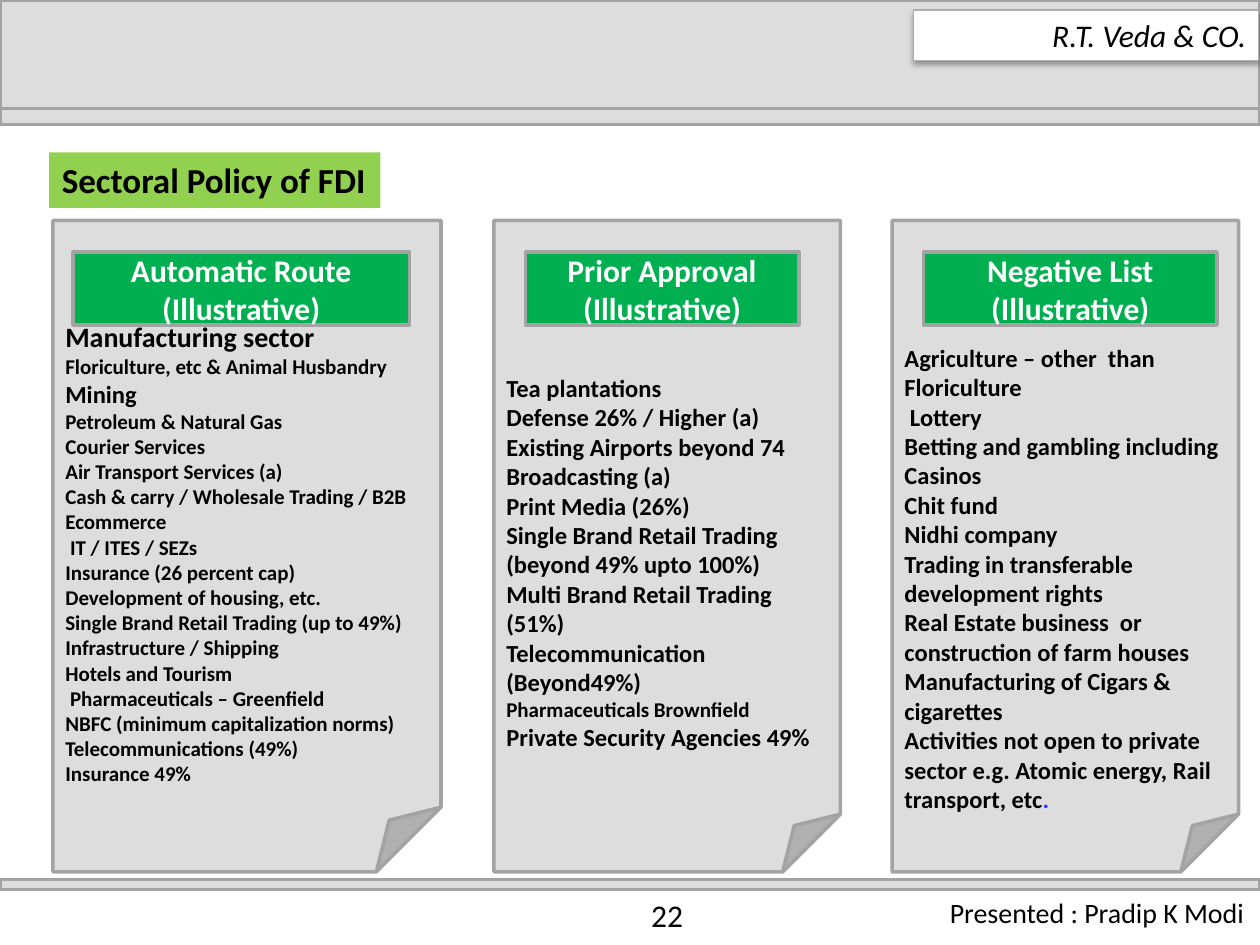
from lxml.etree import SubElement
from pptx import Presentation
from pptx.dml.color import RGBColor
from pptx.enum.shapes import MSO_SHAPE as Shape
from pptx.enum.text import MSO_ANCHOR as Anchor, MSO_AUTO_SIZE as AutoSize, PP_ALIGN as Align
from pptx.oxml.ns import qn
from pptx.util import Inches, Pt


def color(value):
    return RGBColor.from_string(value)


class PolicySlide:
    font = "Calibri"
    ink = "000000"
    panel = "DDDDDD"
    border = "A3A3A3"
    green = "00B050"
    lime = "92D050"

    def __init__(self, prs):
        self.slide = prs.slides.add_slide(prs.slide_layouts[5])

    def format_runs(self, paragraph, size, ink=None, bold=False, italic=False, align=Align.LEFT):
        paragraph.alignment = align
        for run in paragraph.runs:
            run.font.name = self.font
            run.font.size = Pt(size)
            run.font.bold = bold
            run.font.italic = italic
            run.font.color.rgb = color(ink or self.ink)

    def set_text(self, shape, text, size, anchor=Anchor.TOP, wrap=True, **style):
        frame = shape.text_frame
        frame.text = text
        frame.word_wrap = wrap
        frame.auto_size = AutoSize.NONE
        frame.vertical_anchor = anchor
        for paragraph in frame.paragraphs:
            self.format_runs(paragraph, size, **style)

    def title(self, text, left, top, width, height):
        title = self.slide.shapes.title
        title.left, title.top = Inches(left), Inches(top)
        title.width, title.height = Inches(width), Inches(height)
        title.fill.solid()
        title.fill.fore_color.rgb = color(self.lime)
        self.set_text(title, text, 20, wrap=False, bold=True)

    def box(self, left, top, width, height, kind=Shape.RECTANGLE, fill=None, line=None, weight=2):
        box = self.slide.shapes.add_shape(
            kind, Inches(left), Inches(top), Inches(width), Inches(height))
        box.shadow.inherit = False
        box.fill.solid()
        box.fill.fore_color.rgb = color(fill or self.panel)
        box.line.color.rgb = color(line or self.border)
        box.line.width = Pt(weight)
        return box

    def label(self, text, left, top, width, height, size, **style):
        label = self.slide.shapes.add_textbox(
            Inches(left), Inches(top), Inches(width), Inches(height))
        self.set_text(label, text, size, **style)

    def firm_plate(self, text):
        plate = self.box(7.25, 0.08, 2.74, 0.4, fill="FFFFFF", line="AEAEAE", weight=0.75)
        effects = plate._element.spPr.find(qn("a:effectLst"))
        shadow = SubElement(effects, qn("a:outerShdw"), blurRad=str(int(Pt(3.1))),
                            dist=str(int(Pt(1.8))), dir="5400000", rotWithShape="0")
        tint = SubElement(shadow, qn("a:srgbClr"), val="000000")
        SubElement(tint, qn("a:alpha"), val="35000")
        self.set_text(plate, text, 18, italic=True, align=Align.RIGHT)

    def sector_list(self, sectors, left, width, text_top, size, other_sizes):
        top = 1.75
        sheet = self.box(left, top, width, 5.17, Shape.FOLDED_CORNER)
        self.set_text(sheet, "\n".join(sectors), size, bold=True)
        sheet.text_frame.margin_top = Inches(text_top - top)
        for paragraph in sheet.text_frame.paragraphs:
            if paragraph.text in other_sizes:
                self.format_runs(paragraph, other_sizes[paragraph.text], bold=True)
        return sheet

    def heading(self, text, left, width):
        heading = self.box(left, 2, width, 0.58, fill=self.green)
        self.set_text(heading, f"{text}\n(Illustrative)", 18, anchor=Anchor.MIDDLE,
                      ink="FFFFFF", bold=True, align=Align.CENTER)


AUTOMATIC = [
    "Manufacturing sector", "Floriculture, etc & Animal Husbandry", "Mining",
    "Petroleum & Natural Gas", "Courier Services", "Air Transport Services (a)",
    "Cash & carry / Wholesale Trading / B2B Ecommerce", " IT / ITES / SEZs",
    "Insurance (26 percent cap)", "Development of housing, etc.",
    "Single Brand Retail Trading (up to 49%)", "Infrastructure / Shipping",
    "Hotels and Tourism", " Pharmaceuticals – Greenfield",
    "NBFC (minimum capitalization norms)", "Telecommunications (49%)", "Insurance 49%",
]
APPROVAL = [
    "Tea plantations", "Defense 26% / Higher (a)", "Existing Airports beyond 74",
    "Broadcasting (a)", "Print Media (26%)", "Single Brand Retail Trading",
    "(beyond 49% upto 100%)", "Multi Brand Retail Trading (51%)",
    "Telecommunication (Beyond49%)", "Pharmaceuticals Brownfield",
    "Private Security Agencies 49%",
]
NEGATIVE = [
    "Agriculture – other  than Floriculture", " Lottery",
    "Betting and gambling including Casinos", "Chit fund", "Nidhi company",
    "Trading in transferable", "development rights",
    "Real Estate business  or construction of farm houses",
    "Manufacturing of Cigars & cigarettes",
    "Activities not open to private sector e.g. Atomic energy, Rail", "transport, etc",
]


def main():
    prs = Presentation()
    prs.slide_width, prs.slide_height = Inches(10), Inches(7.5)
    page = PolicySlide(prs)

    for top, height in [(0, 0.92), (0.86, 0.13), (6.98, 0.08)]:
        page.box(0, top, 10, height)
    page.firm_plate("R.T. Veda & CO.")
    page.label("Presented : Pradip K Modi", 7.44, 7.06, 2.57, 0.37, 16, wrap=False)
    page.label("22", 4.13, 7.06, 2.33, 0.4, 18, anchor=Anchor.MIDDLE, align=Align.CENTER)
    page.title("Sectoral Policy of FDI", 0.39, 1.21, 2.63, 0.44)

    page.sector_list(AUTOMATIC, 0.42, 3.08, 2.54, 12, {"Manufacturing sector": 16, "Mining": 14})
    page.sector_list(APPROVAL, 3.92, 2.75, 2.96, 14, {"Pharmaceuticals Brownfield": 12})
    negative = page.sector_list(NEGATIVE, 7.08, 2.75, 2.72, 14, {})
    closing = negative.text_frame.paragraphs[-1]
    full_stop = closing.add_run()
    full_stop.text = "."
    page.format_runs(closing, 14, bold=True)
    full_stop.font.color.rgb = color("3333FF")

    page.heading("Automatic Route", 0.58, 2.67)
    page.heading("Prior Approval", 4.17, 2.17)
    page.heading("Negative List", 7.33, 2.33)
    prs.save("out.pptx")


if __name__ == "__main__":
    main()
